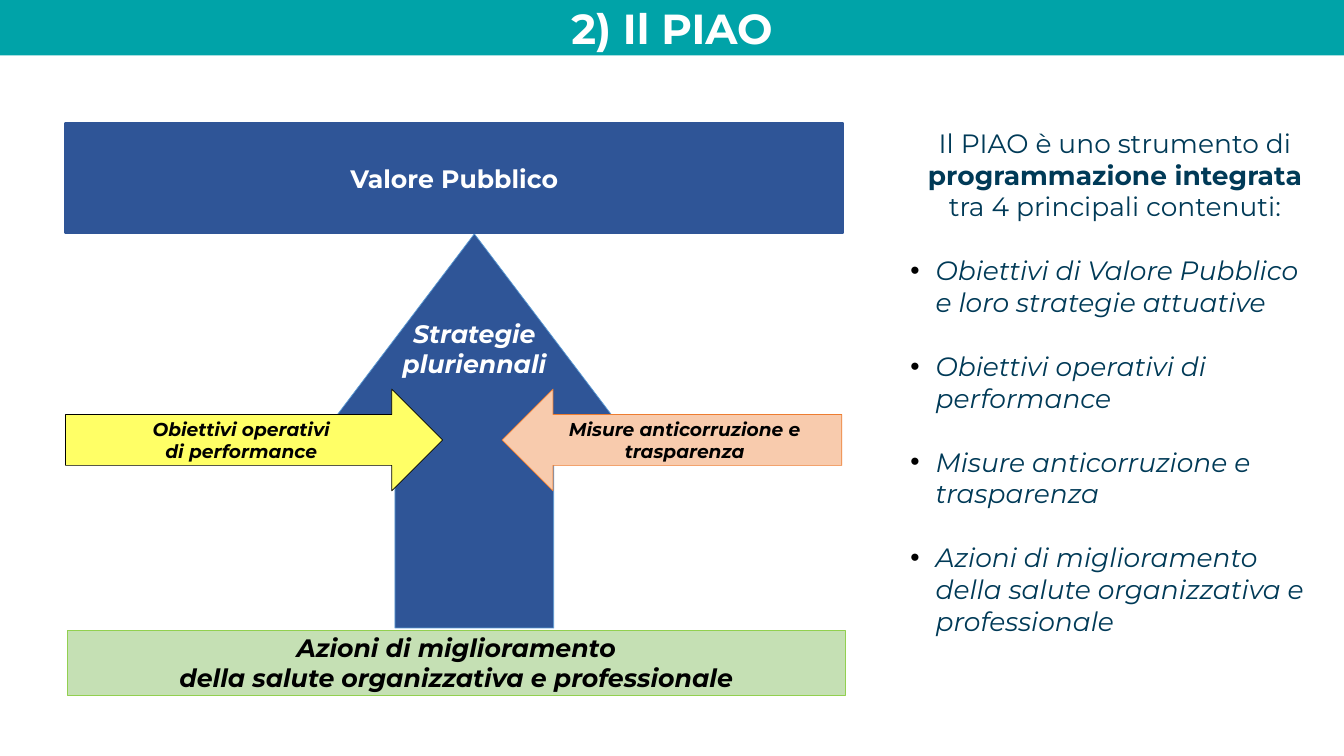
"""Build the PIAO slide: a diagram of converging arrows beside a bulleted summary."""
from lxml import etree
from pptx import Presentation
from pptx import util as u
from pptx.dml.color import RGBColor
from pptx.enum import shapes, text
from pptx.oxml.ns import qn

COLOURS = {
    "teal": "00A3A8", "blue": "2F5597", "sky": "5B9BD5", "navy": "003A57",
    "green": "C5E0B4", "lime": "92D050", "peach": "F8CBAD", "orange": "ED7D31",
    "yellow": "FFFF66", "black": "000000", "white": "FFFFFF",
}
FONT = "Montserrat"
LABEL = {"size": u.Pt(18), "bold": True, "italic": True}
ARROW_LABEL = {**LABEL, "size": u.Pt(13.3)}
BODY = {"size": u.Pt(18.9), "bold": False, "italic": False}
BODY_GAP = u.Pt(23)
SHAPE = shapes.MSO_SHAPE
CONTENTS = [
    "Obiettivi di Valore Pubblico e loro strategie attuative",
    "Obiettivi operativi di performance",
    "Misure anticorruzione e trasparenza",
    "Azioni di miglioramento della salute organizzativa e professionale",
]


def colour(name):
    """Return the named palette colour."""
    return RGBColor.from_string(COLOURS[name])


def apply(target, values):
    """Set every attribute in values on the target."""
    for name, value in values.items():
        setattr(target, name, value)


def add_span(para, words, ink, style):
    """Add one formatted run to a paragraph."""
    span = para.add_run()
    span.text = words
    apply(span.font, {"name": FONT, **style})
    span.font.color.rgb = colour(ink)


def write_lines(box, lines, ink, style):
    """Write centred lines in the middle of a shape, one paragraph each."""
    frame = box.text_frame
    apply(frame, {"word_wrap": True, "auto_size": text.MSO_AUTO_SIZE.NONE,
                  "vertical_anchor": text.MSO_ANCHOR.MIDDLE,
                  "margin_top": u.Inches(0.05), "margin_bottom": u.Inches(0.05)})
    for number, line in enumerate(lines):
        para = frame.add_paragraph() if number else frame.paragraphs[0]
        para.alignment = text.PP_ALIGN.CENTER
        add_span(para, line, ink, style)


def add_title(page, words):
    """Turn the title placeholder into the full-width heading band."""
    title = page.shapes.title
    apply(title, {"left": 0, "top": 0,
                  "width": u.Inches(13.33), "height": u.Inches(0.55)})
    title.fill.solid()
    title.fill.fore_color.rgb = colour("teal")
    write_lines(title, [words], "white", {"size": u.Pt(30), "bold": True})
    apply(title.text_frame, {"margin_top": 0, "margin_bottom": 0})


def add_block(page, kind, place, fill, outline, weight=0.5, adjust=()):
    """Add a filled and outlined preset shape."""
    block = page.shapes.add_shape(kind, *map(u.Inches, place))
    block.shadow.inherit = False
    block.fill.solid()
    block.fill.fore_color.rgb = colour(fill)
    block.line.color.rgb = colour(outline)
    block.line.width = u.Pt(weight)
    for number, value in enumerate(adjust):
        block.adjustments[number] = value
    return block


def add_bullet(para):
    """Give a paragraph a hanging black bullet."""
    props = para._p.get_or_add_pPr()
    props.set("marL", str(u.Inches(0.25)))
    props.set("indent", str(-u.Inches(0.25)))
    tint = etree.SubElement(props, qn("a:buClr"))
    etree.SubElement(tint, qn("a:srgbClr"), val=COLOURS["black"])
    etree.SubElement(props, qn("a:buFont"), typeface="Arial")
    etree.SubElement(props, qn("a:buChar"), char="•")


def add_summary(page):
    """Add the introduction and the bulleted list of contents."""
    box = page.shapes.add_textbox(*map(u.Inches, (8.9, 1.13, 4.32, 5.37)))
    frame = box.text_frame
    frame.word_wrap = True
    for side in ("left", "right", "top", "bottom"):
        setattr(frame, f"margin_{side}", u.Inches(0.13))
    intro = frame.paragraphs[0]
    apply(intro, {"alignment": text.PP_ALIGN.CENTER, "space_after": BODY_GAP})
    add_span(intro, "Il PIAO è uno strumento di ", "navy", BODY)
    add_span(intro, "programmazione integrata ", "navy", {**BODY, "bold": True})
    add_span(intro, "tra 4 principali contenuti:", "navy", BODY)
    for content in CONTENTS:
        para = frame.add_paragraph()
        para.space_after = BODY_GAP if content != CONTENTS[-1] else 0
        add_bullet(para)
        add_span(para, content, "navy", {**BODY, "italic": True})


def add_diagram(page):
    """Add the public value diagram with its arrows and labels."""
    add_block(page, SHAPE.UP_ARROW, (3.13, 2.32, 3.15, 3.91),
              "blue", "sky", adjust=(0.5, 0.66))
    base = add_block(page, SHAPE.RECTANGLE, (0.67, 6.25, 7.71, 0.65), "green", "lime")
    write_lines(base, ["Azioni di miglioramento",
                       "della salute organizzativa e professionale"], "black", LABEL)
    measures = add_block(page, SHAPE.LEFT_ARROW, (4.98, 3.86, 3.37, 1.01),
                         "peach", "orange")
    write_lines(measures, ["Misure anticorruzione e trasparenza"], "black", ARROW_LABEL)
    goals = add_block(page, SHAPE.RIGHT_ARROW, (0.65, 3.86, 3.74, 1.01),
                      "yellow", "black")
    write_lines(goals, ["Obiettivi operativi", "di performance"], "black", ARROW_LABEL)
    strategies = page.shapes.add_textbox(*map(u.Inches, (3.48, 3.11, 2.45, 0.7)))
    write_lines(strategies, ["Strategie", "pluriennali"], "white", LABEL)
    value = add_block(page, SHAPE.RECTANGLE, (0.65, 1.22, 7.71, 1.09),
                      "blue", "blue", weight=1.5)
    write_lines(value, ["Valore Pubblico"], "white", {**LABEL, "italic": False})


def main():
    """Build and save the deck."""
    deck = Presentation()
    apply(deck, {"slide_width": u.Inches(13.33), "slide_height": u.Inches(7.5)})
    page = deck.slides.add_slide(deck.slide_layouts.get_by_name("Title Only"))
    add_title(page, "2) Il PIAO")
    add_summary(page)
    add_diagram(page)
    deck.save("out.pptx")


if __name__ == "__main__":
    main()
